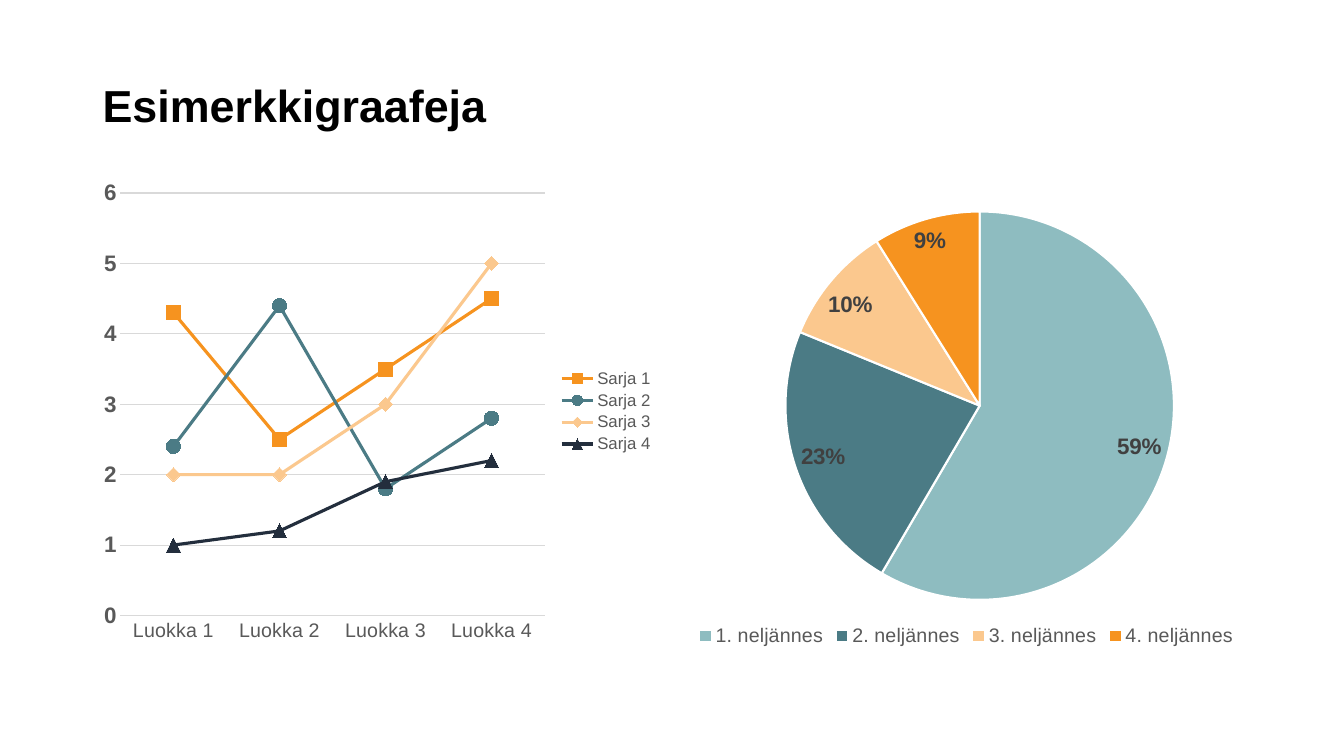
from pptx import Presentation
from pptx.chart.data import CategoryChartData
from pptx.dml.color import RGBColor
from pptx.enum.chart import (XL_CHART_TYPE, XL_LABEL_POSITION, XL_LEGEND_POSITION,
                             XL_MARKER_STYLE, XL_TICK_MARK)
from pptx.enum.text import MSO_ANCHOR
from pptx.util import Inches, Pt

# Content
TITLE = "Esimerkkigraafeja"
LINE_CATEGORIES = ["Luokka 1", "Luokka 2", "Luokka 3", "Luokka 4"]
LINE_SERIES = [
    ("Sarja 1", (4.3, 2.5, 3.5, 4.5), "orange", XL_MARKER_STYLE.SQUARE),
    ("Sarja 2", (2.4, 4.4, 1.8, 2.8), "teal", XL_MARKER_STYLE.CIRCLE),
    ("Sarja 3", (2, 2, 3, 5), "peach", XL_MARKER_STYLE.DIAMOND),
    ("Sarja 4", (1, 1.2, 1.9, 2.2), "navy", XL_MARKER_STYLE.TRIANGLE),
]
QUARTERS = [
    ("1. neljännes", 59, "mist"),
    ("2. neljännes", 23, "teal"),
    ("3. neljännes", 10, "peach"),
    ("4. neljännes", 9, "orange"),
]

THEME = {
    "font": "Arial",
    "color": {name: RGBColor.from_string(code) for name, code in {
        "black": "000000", "white": "FFFFFF", "text": "595959", "label": "404040",
        "grid": "D9D9D9", "orange": "F6931F", "teal": "4B7B85", "peach": "FBC88E",
        "navy": "232E3D", "mist": "8EBCC0"}.items()},
    "size": {"title": 32, "base": 10, "small": 12, "medium": 14, "large": 16},
}
COLOR = THEME["color"]

# Layout: two equal columns
SLIDE_W, SLIDE_H = 13.33, 7.5
MARGIN, GAP = 0.92, 0.16
CHART_TOP, CHART_H = 1.7, 4.76
CONTENT_W = 11.5
CHART_W = (CONTENT_W - GAP) / 2


def style_font(font, size, color, bold=False):
    font.name = THEME["font"]
    font.size = Pt(THEME["size"][size])
    font.color.rgb = COLOR[color]
    font.bold = bold


def style_line(line, color, width):
    line.color.rgb = COLOR[color]
    line.width = Pt(width)


def add_chart(slide, column, kind, data, legend_side, legend_size):
    left = MARGIN + column * (CHART_W + GAP)
    chart = slide.shapes.add_chart(kind, Inches(left), Inches(CHART_TOP),
                                   Inches(CHART_W), Inches(CHART_H), data).chart
    style_font(chart.font, "base", "black")
    chart.has_title = False
    chart.has_legend = True
    chart.legend.position = legend_side
    chart.legend.include_in_layout = False
    style_font(chart.legend.font, legend_size, "text")
    return chart


def add_trend(slide):
    data = CategoryChartData()
    data.categories = LINE_CATEGORIES
    for name, values, _, _ in LINE_SERIES:
        data.add_series(name, values)
    trend = add_chart(slide, 0, XL_CHART_TYPE.LINE_MARKERS, data,
                      XL_LEGEND_POSITION.RIGHT, "small")
    trend.plots[0].vary_by_categories = False

    for series, (_, _, color, marker) in zip(trend.plots[0].series, LINE_SERIES):
        series.smooth = False
        style_line(series.format.line, color, 2.25)
        series.marker.style = marker
        series.marker.size = 10
        series.marker.format.fill.solid()
        series.marker.format.fill.fore_color.rgb = COLOR[color]
        series.marker.format.line.color.rgb = COLOR[color]

    categories, values = trend.category_axis, trend.value_axis
    for axis in (categories, values):
        axis.major_tick_mark = axis.minor_tick_mark = XL_TICK_MARK.NONE
    style_font(categories.tick_labels.font, "medium", "text")
    style_line(categories.format.line, "grid", 0.75)
    style_font(values.tick_labels.font, "large", "text", bold=True)
    values.format.line.fill.background()
    values.minimum_scale, values.maximum_scale, values.major_unit = 0, 6, 1
    values.has_major_gridlines = True
    style_line(values.major_gridlines.format.line, "grid", 0.75)


def add_shares(slide):
    data = CategoryChartData()
    data.categories = [name for name, _, _ in QUARTERS]
    data.add_series("Series 1", [share for _, share, _ in QUARTERS])
    shares = add_chart(slide, 1, XL_CHART_TYPE.PIE, data,
                       XL_LEGEND_POSITION.BOTTOM, "medium")
    pie = shares.plots[0]
    pie.vary_by_categories = True
    for index, (_, _, color) in enumerate(QUARTERS):
        wedge = pie.series[0].points[index].format
        wedge.fill.solid()
        wedge.fill.fore_color.rgb = COLOR[color]
        style_line(wedge.line, "white", 1.5)

    # The rounded shares sum to 101, so each label shows its own value
    labels = pie.series[0].data_labels
    labels.show_value = True
    labels.show_percentage = False
    labels.number_format = '0"%"'
    labels.number_format_is_linked = False
    labels.position = XL_LABEL_POSITION.BEST_FIT
    style_font(labels.font, "large", "label", bold=True)


def add_title(slide):
    heading = slide.shapes.add_textbox(Inches(MARGIN), Inches(0),
                                       Inches(CONTENT_W), Inches(1.36)).text_frame
    heading.word_wrap = True
    heading.vertical_anchor = MSO_ANCHOR.BOTTOM
    paragraph = heading.paragraphs[0]
    paragraph.line_spacing = 0.9
    run = paragraph.add_run()
    run.text = TITLE
    style_font(run.font, "title", "black", bold=True)


def main():
    deck = Presentation()
    deck.slide_width, deck.slide_height = Inches(SLIDE_W), Inches(SLIDE_H)
    slide = deck.slides.add_slide(deck.slide_layouts[6])
    add_title(slide)
    add_trend(slide)
    add_shares(slide)
    deck.save("out.pptx")


if __name__ == "__main__":
    main()
